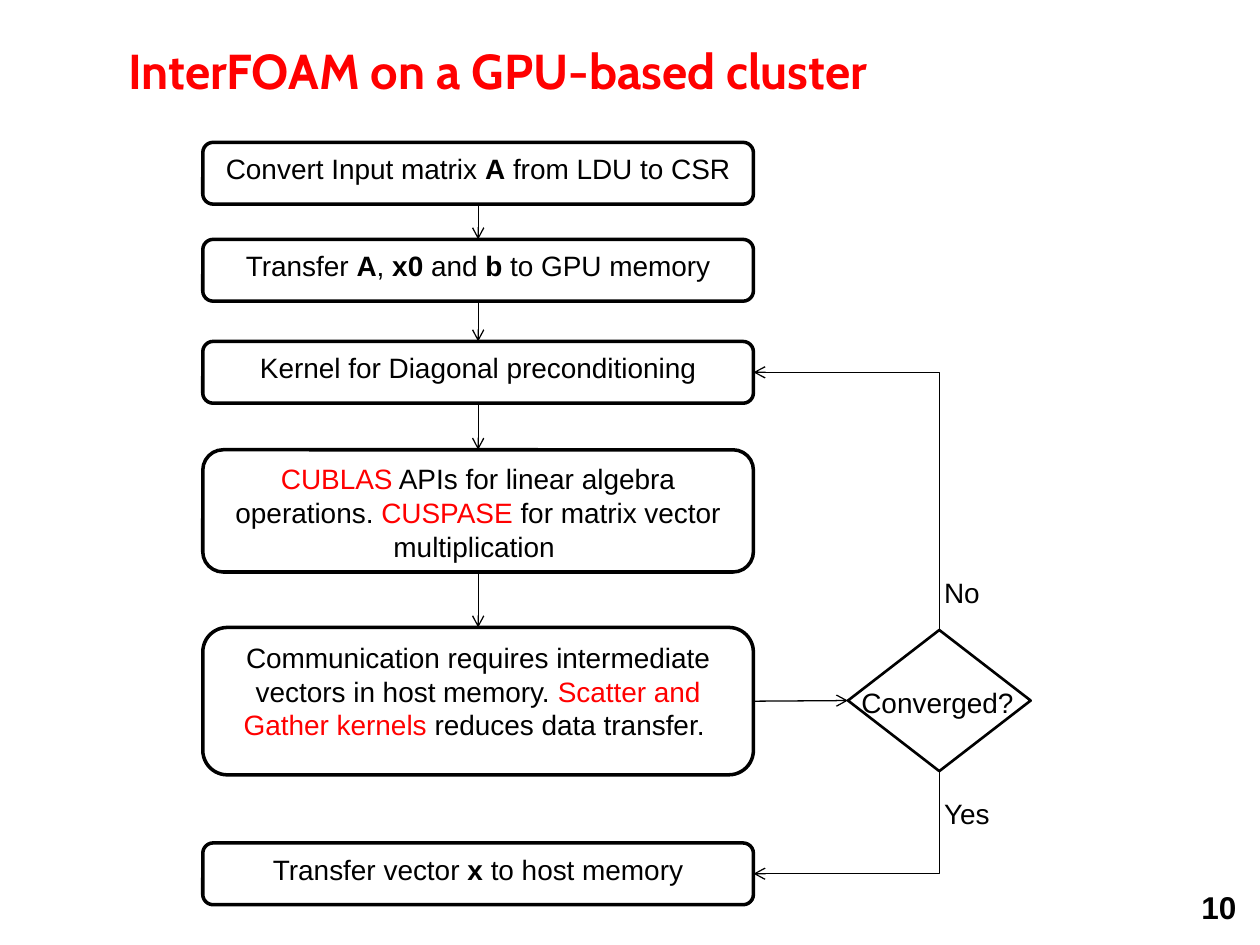
from lxml import etree
from pptx import Presentation, util as u
from pptx.dml.color import RGBColor
from pptx.enum import shapes, text
from pptx.oxml.ns import qn

BLACK, RED, WHITE = "000000", "FF0000", "FFFFFF"
TITLE = "InterFOAM on a GPU-based cluster"
PAGE_NUMBER = "10"

# Flow steps: top, height, text; *...* is bold, ~...~ is red
STEPS = [
    (1.13, 0.49, "Convert Input matrix *A* from LDU to CSR"),
    (1.9, 0.49, "Transfer *A*, *x0* and *b* to GPU memory"),
    (2.71, 0.49, "Kernel for Diagonal preconditioning"),
    (3.57, 0.97, "~CUBLAS~ APIs for linear algebra operations. "
                 "~CUSPASE~ for matrix vector multiplication "),
    (4.98, 1.17, "Communication requires intermediate vectors in host memory. "
                 "~Scatter and Gather kernels ~reduces data transfer. "),
    (6.69, 0.49, "Transfer vector *x *to host memory"),
]
STEP_LEFT, STEP_WIDTH = 1.61, 4.37
DECISION = (6.73, 5, 1.45, 1.12)
LABELS = [
    ("Converged?", (6.6, 5.39, 1.68, 0.37)),
    ("No", (7.27, 4.52, 0.73, 0.37)),
    ("Yes", (7.31, 6.27, 0.73, 0.37)),
]
TOP, LEFT, BOTTOM, RIGHT = range(4)  # connection sites


def color(value):
    return RGBColor.from_string(value)


def inches(place):
    return [u.Inches(value) for value in place]


def split_marks(marked):
    """Yield (text, bold, red) for each stretch between marks."""
    bold = red = False
    piece = ""
    for character in marked:
        if character in "*~":
            if piece:
                yield piece, bold, red
            piece = ""
            bold ^= character == "*"
            red ^= character == "~"
        else:
            piece += character
    if piece:
        yield piece, bold, red


def write(shape, marked, size=16, font="Arial", align=text.PP_ALIGN.CENTER,
          anchor=text.MSO_ANCHOR.TOP):
    frame = shape.text_frame
    frame.word_wrap = True
    frame.vertical_anchor = anchor
    paragraph = frame.paragraphs[0]
    paragraph.alignment = align
    paragraph.font.size = u.Pt(size)
    paragraph.font.name = font
    for piece, bold, red in split_marks(marked):
        run = paragraph.add_run()
        run.text = piece
        run.font.bold = bold
        run.font.color.rgb = color(RED if red else BLACK)


def add_text(slide, place, marked, **style):
    write(slide.shapes.add_textbox(*inches(place)), marked, **style)


def add_outline(slide, kind, place, line_width, fill=None):
    shape = slide.shapes.add_shape(kind, *inches(place))
    shape.shadow.inherit = False
    if fill:
        shape.fill.solid()
        shape.fill.fore_color.rgb = color(fill)
    else:
        shape.fill.background()
    shape.line.color.rgb = color(BLACK)
    shape.line.width = u.Pt(line_width)
    return shape


def connect(slide, start, start_site, end, end_site, bent=False):
    """Join two shapes; a bent line has one corner and its arrow at the start."""
    kind = shapes.MSO_CONNECTOR.ELBOW if bent else shapes.MSO_CONNECTOR.STRAIGHT
    connector = slide.shapes.add_connector(kind, 0, 0, 0, 0)
    connector.begin_connect(start, start_site)
    connector.end_connect(end, end_site)
    connector.line.color.rgb = color(BLACK)
    connector.line.width = u.Pt(0.75)
    properties = connector._element.spPr
    if bent:
        properties.find(qn("a:prstGeom")).set("prst", "bentConnector2")
    arrow_end = "a:headEnd" if bent else "a:tailEnd"
    etree.SubElement(properties.find(qn("a:ln")), qn(arrow_end), type="arrow")
    etree.SubElement(properties, qn("a:effectLst"))


def main():
    presentation = Presentation()
    presentation.slide_width, presentation.slide_height = inches((10, 7.5))
    slide = presentation.slides.add_slide(presentation.slide_layouts[6])

    add_text(slide, (0.92, 0.22, 8, 0.67), f"*~{TITLE}", size=28, font="Cabin",
             align=text.PP_ALIGN.LEFT, anchor=text.MSO_ANCHOR.MIDDLE)
    add_text(slide, (7.83, 7, 2.08, 0.33), f"*{PAGE_NUMBER}", size=18,
             align=text.PP_ALIGN.RIGHT)

    steps = []
    for top, height, marked in STEPS:
        step = add_outline(slide, shapes.MSO_SHAPE.ROUNDED_RECTANGLE,
                           (STEP_LEFT, top, STEP_WIDTH, height), 2, WHITE)
        write(step, marked)
        steps.append(step)
    decision = add_outline(slide, shapes.MSO_SHAPE.DIAMOND, DECISION, 1.5)

    preconditioning, communication, result = steps[2], steps[4], steps[5]
    for upper, lower in zip(steps[:4], steps[1:5]):
        connect(slide, upper, BOTTOM, lower, TOP)
    connect(slide, communication, RIGHT, decision, LEFT)
    connect(slide, preconditioning, RIGHT, decision, TOP, bent=True)
    connect(slide, result, RIGHT, decision, BOTTOM, bent=True)

    for label, place in LABELS:
        add_text(slide, place, label)

    presentation.save("out.pptx")


if __name__ == "__main__":
    main()
